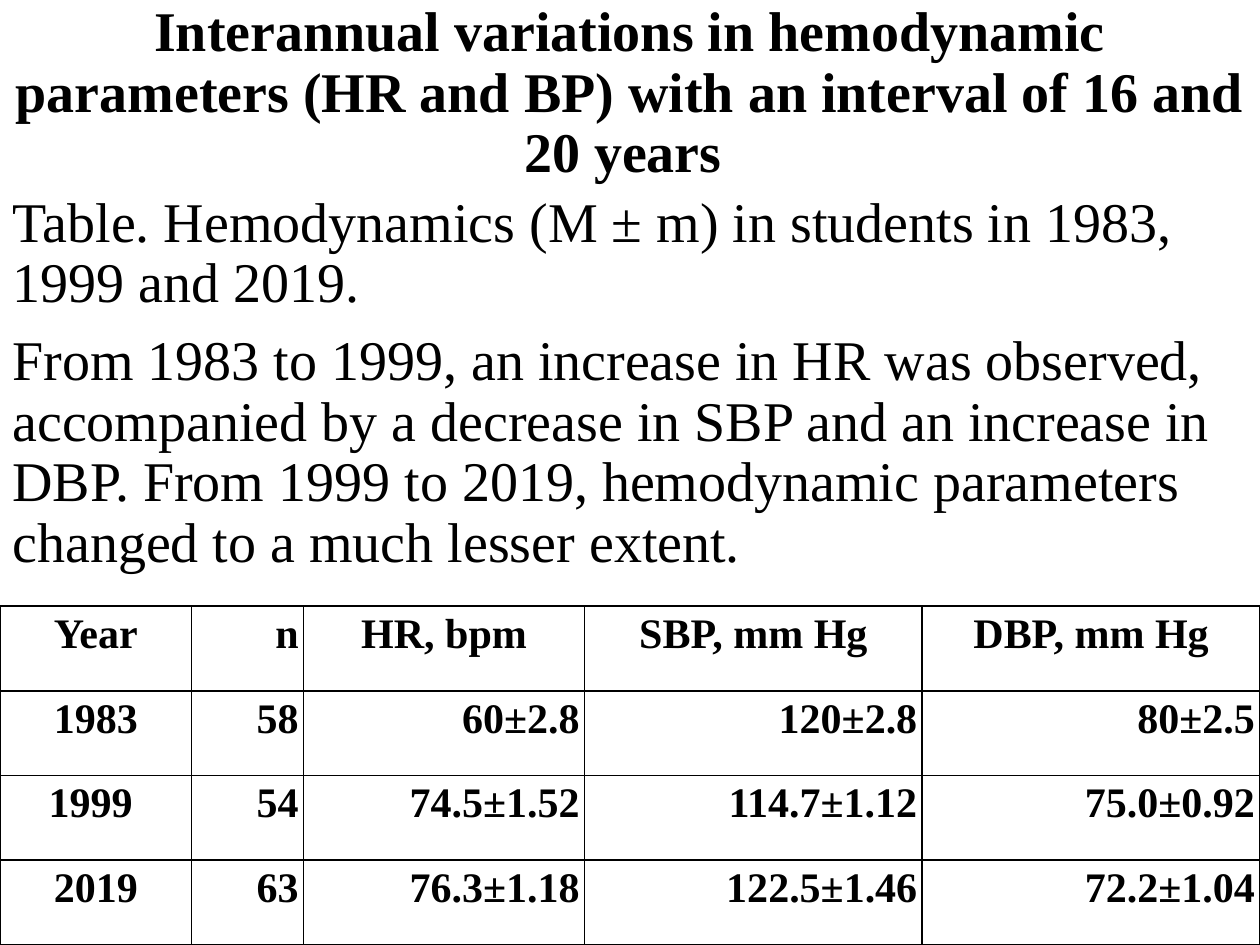
import pptx
import pptx.dml.color
import pptx.enum.text
import pptx.oxml
import pptx.util
from pptx.util import Inches

FONT = "Times New Roman"
BLACK = "000000"
ALIGN = pptx.enum.text.PP_ALIGN
ANCHOR = pptx.enum.text.MSO_ANCHOR

HEADING = ("Interannual variations in hemodynamic parameters (HR and BP) "
           "with an interval of 16 and 20 years ")
FINDINGS = [
    "Table. Hemodynamics (M ± m) in students in 1983, 1999 and 2019.",
    "From 1983 to 1999, an increase in HR was observed, accompanied by "
    "a decrease in SBP and an increase in DBP. From 1999 to 2019, "
    "hemodynamic parameters changed to a much lesser extent.",
]
HEMODYNAMICS = [
    ["Year", "n", "HR, bpm", "SBP, mm Hg", "DBP, mm Hg"],
    ["1983", "58", "60±2.8", "120±2.8", "80±2.5"],
    ["1999 ", "54", "74.5±1.52", "114.7±1.12", "75.0±0.92"],
    ["2019", "63", "76.3±1.18", "122.5±1.46", "72.2±1.04"],
]
COLUMN_WIDTHS = [1.52, 0.89, 2.23, 2.68, 2.68]


def color(value):
    return pptx.dml.color.RGBColor.from_string(value)


def style_paragraph(paragraph, size, bold, align):
    paragraph.alignment = align
    for run in paragraph.runs:
        run.font.name = FONT
        run.font.size = pptx.util.Pt(size)
        run.font.bold = bold
        run.font.color.rgb = color(BLACK)


def add_text(slide, box, paragraphs, bold, align, anchor, space_before):
    frame = slide.shapes.add_textbox(*map(Inches, box)).text_frame
    frame.word_wrap = True
    frame.vertical_anchor = anchor
    frame.text = "\n".join(paragraphs)
    for paragraph in frame.paragraphs:
        paragraph.line_spacing = 0.9
        paragraph.space_before = pptx.util.Pt(space_before)
        style_paragraph(paragraph, 32, bold, align)


def add_heading(slide, box):
    add_text(slide, box, [HEADING], True, ALIGN.CENTER, ANCHOR.MIDDLE, 0)


def add_findings(slide, box):
    add_text(slide, box, FINDINGS, False, ALIGN.LEFT, ANCHOR.TOP, 10)


def add_borders(cell):
    properties = cell._tc.get_or_add_tcPr()
    for index, side in enumerate(("lnL", "lnR", "lnT", "lnB")):
        border = pptx.oxml.parse_xml(
            f'<a:{side} xmlns:a="http://schemas.openxmlformats.org/drawingml/2006/main" '
            f'w="{pptx.util.Pt(1)}"><a:solidFill><a:srgbClr val="{BLACK}"/>'
            f'</a:solidFill></a:{side}>')
        properties.insert(index, border)


def add_hemodynamics(slide, box):
    table = slide.shapes.add_table(
        len(HEMODYNAMICS), len(COLUMN_WIDTHS), *map(Inches, box)).table
    table.first_row = False
    table.horz_banding = False
    for column, width in zip(table.columns, COLUMN_WIDTHS):
        column.width = Inches(width)
    for r, values in enumerate(HEMODYNAMICS):
        for c, value in enumerate(values):
            cell = table.cell(r, c)
            cell.text_frame.text = value
            cell.margin_left = cell.margin_right = Inches(0.04)
            cell.margin_top = cell.margin_bottom = Inches(0.04)
            cell.fill.background()
            add_borders(cell)
            centered = c == 0 or (r == 0 and c > 1)
            style_paragraph(cell.text_frame.paragraphs[0], 24, True,
                            ALIGN.CENTER if centered else ALIGN.RIGHT)


def main():
    presentation = pptx.Presentation()
    presentation.slide_width = Inches(10)
    presentation.slide_height = Inches(7.5)
    slide = presentation.slides.add_slide(presentation.slide_layouts[6])
    add_heading(slide, (0, 0, 10, 1.49))
    add_findings(slide, (0, 1.49, 10, 6.01))
    add_hemodynamics(slide, (0, 4.81, 10, 2.69))
    presentation.save("out.pptx")


if __name__ == "__main__":
    main()
